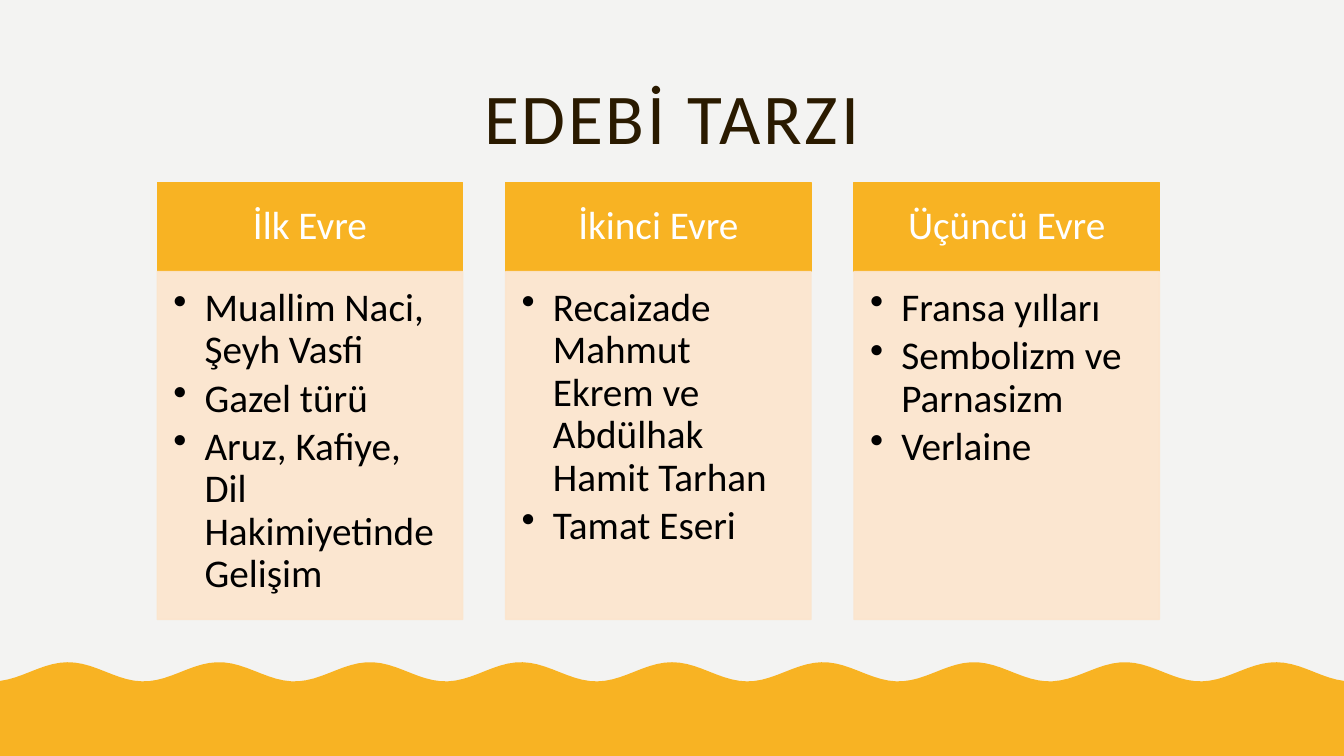
"""Build a slide with three phase columns above a wavy footer."""
from math import cos, pi

from lxml.etree import SubElement
from pptx import Presentation
from pptx.dml.color import RGBColor
from pptx.enum.shapes import MSO_SHAPE
from pptx.enum.text import MSO_ANCHOR, PP_ALIGN
from pptx.oxml.ns import qn
from pptx.util import Inches, Pt

WIDE, HIGH = 13.33, 7.5
LEFT, PITCH, SPAN = 1.56, 3.455, 3.03
TOP, HEAD, BODY = 1.81, 0.885, 3.45
GOLD, PEACH, PAPER, DARK = "F8B323", "FCE5CD", "F3F3F2", "2A1A00"
WHITE, BLACK = "FFFFFF", "000000"
PHASES = [
    ("İlk Evre", ["Muallim Naci, Şeyh Vasfi", "Gazel türü",
                  "Aruz, Kafiye, Dil Hakimiyetinde Gelişim"]),
    ("İkinci Evre", ["Recaizade Mahmut Ekrem ve Abdülhak Hamit Tarhan",
                     "Tamat Eseri"]),
    ("Üçüncü Evre", ["Fransa yılları", "Sembolizm ve Parnasizm", "Verlaine"]),
]


def tint(fill, code):
    """Make a fill solid in a hex colour."""
    fill.solid()
    fill.fore_color.rgb = RGBColor.from_string(code)


def write(shape, lines, size, code, align, anchor, pads):
    """Put styled paragraphs into a shape and return them."""
    frame = shape.text_frame
    frame.word_wrap = True
    frame.vertical_anchor = anchor
    (frame.margin_left, frame.margin_top,
     frame.margin_right, frame.margin_bottom) = map(Inches, pads)
    frame.text = "\n".join(lines)
    for para in frame.paragraphs:
        para.alignment = align
        para.line_spacing = 0.9
        para.font.name = "Calibri"
        para.font.size = Pt(size)
        para.font.color.rgb = RGBColor.from_string(code)
    return frame.paragraphs


def panel(slide, left, top, high, code):
    """Add a plain column block."""
    box = slide.shapes.add_shape(
        MSO_SHAPE.RECTANGLE, *map(Inches, (left, top, SPAN, high)))
    box.shadow.inherit = False
    tint(box.fill, code)
    tint(box.line.fill, code)
    box.line.width = Pt(1)
    return box


def fade(shape, share):
    """Set the opacity of a shape's fill and line."""
    for node in shape._element.spPr.iter(qn("a:srgbClr")):
        SubElement(node, qn("a:alpha")).set("val", str(share * 1000))


def bullet(para):
    """Give a paragraph a hanging bullet."""
    para.space_after = Pt(4.2)
    props = para._p.get_or_add_pPr()
    props.set("marL", str(Inches(0.31)))
    props.set("indent", str(-Inches(0.31)))
    SubElement(props, qn("a:buChar")).set("char", "•")


def column(slide, index, name, items):
    """Add one phase with its heading and list."""
    left = LEFT + index * PITCH
    head = panel(slide, left, TOP, HEAD, GOLD)
    write(head, [name], 28, WHITE, PP_ALIGN.CENTER, MSO_ANCHOR.MIDDLE,
          (0.22, 0.12, 0.22, 0.12))
    body = panel(slide, left, TOP + HEAD, BODY, PEACH)
    fade(body, 90)
    for para in write(body, items, 28, BLACK, PP_ALIGN.LEFT, MSO_ANCHOR.TOP,
                      (0.16, 0.16, 0.22, 0.24)):
        bullet(para)


def title(slide, words):
    """Add the spaced, centred title."""
    box = slide.shapes.add_textbox(
        *map(Inches, (0.83, 0.42, WIDE - 2 * 0.83, 1.22)))
    para, = write(box, [words], 51, DARK, PP_ALIGN.CENTER, MSO_ANCHOR.BOTTOM,
                  (0.1, 0.05, 0.1, 0.05))
    para.runs[0]._r.get_or_add_rPr().set("spc", "200")


def wave(slide, crest=0.675, cycle=1.4975, steps=180):
    """Add the footer with a cosine upper edge."""
    spots = [WIDE * step / steps for step in range(steps + 1)]
    edge = [(x, 6.665 - 0.095 * cos(2 * pi * (x - crest) / cycle))
            for x in spots]
    pen = slide.shapes.build_freeform(0, Inches(HIGH), 1.0)
    pen.add_line_segments([(Inches(x), Inches(y))
                           for x, y in edge + [(WIDE, HIGH)]])
    foot = pen.convert_to_shape()
    foot.shadow.inherit = False
    tint(foot.fill, GOLD)
    foot.line.fill.background()


def main():
    """Build and save the deck."""
    deck = Presentation()
    deck.slide_width, deck.slide_height = Inches(WIDE), Inches(HIGH)
    slide = deck.slides.add_slide(deck.slide_layouts[6])
    tint(slide.background.fill, PAPER)
    title(slide, "EDEBİ TARZI")
    wave(slide)
    for index, (name, items) in enumerate(PHASES):
        column(slide, index, name, items)
    deck.save("out.pptx")


if __name__ == "__main__":
    main()
